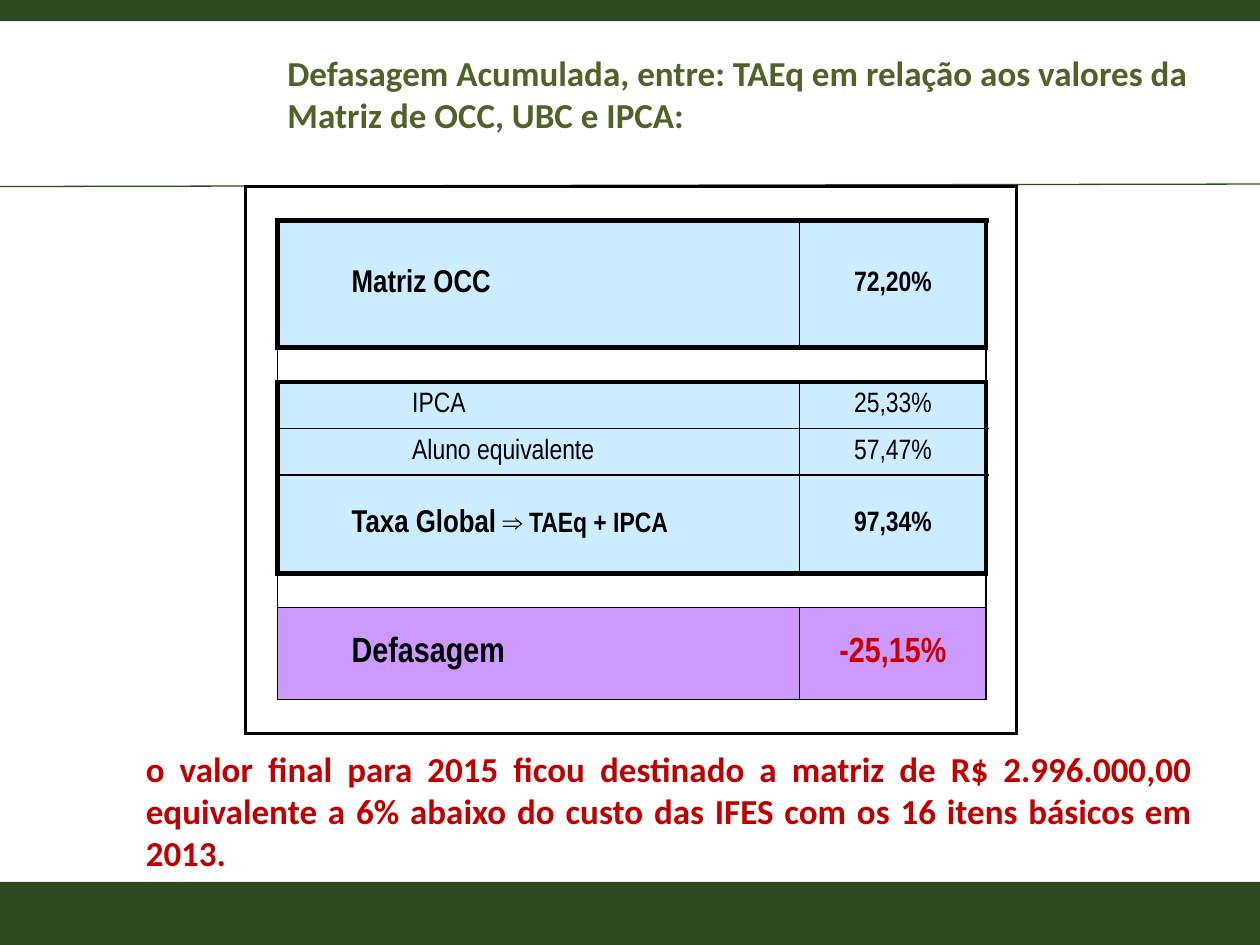
from dataclasses import dataclass

from lxml.etree import SubElement
from pptx import Presentation
from pptx.dml.color import RGBColor
from pptx.enum.shapes import MSO_CONNECTOR as Conn, MSO_SHAPE as Shape
from pptx.enum.text import MSO_ANCHOR as Anchor, MSO_AUTO_SIZE as AutoSize, PP_ALIGN as Align
from pptx.oxml.ns import qn
from pptx.util import Cm, Pt


@dataclass(frozen=True)
class Theme:
    """Colours, fonts and type sizes of the slide."""
    band: str = "314923"
    title: str = "4F6228"
    note: str = "C00000"
    ink: str = "000000"
    negative: str = "CC0000"
    rate: str = "CCECFF"
    gap: str = "CC99FF"
    text_font: str = "Calibri"
    table_font: str = "Arial Narrow"
    big: int = 20
    medium: int = 18
    small: int = 16
    empty: int = 8


T = Theme()
COLS = [0.64, 3.51, 3.51, 3.51, 3.76, 0.58]
ROWS = [0.69, 2.56, 0.69, 0.94, 0.94, 1.98, 0.69, 1.85, 0.69]
HAIR, FRAME, THICK = 1, 2.25, 3
LABEL, VALUE, LAST = 1, 4, 5
INDENT = {1: 1.5, 2: 2.72}
ROW_EDGES = {1: THICK, 2: THICK, 3: THICK, 4: HAIR, 5: HAIR, 6: THICK, 7: HAIR, 8: HAIR}
RATE_ROWS, GAP_ROWS = (1, 3, 4, 5), (2, 6)
RECORDS = {
    1: (1, [("Matriz OCC", T.medium)], ("72,20%", T.small), True, T.ink, T.rate),
    3: (2, [("IPCA", T.small)], ("25,33%", T.small), False, T.ink, T.rate),
    4: (2, [("Aluno equivalente", T.small)], ("57,47%", T.small), False, T.ink, T.rate),
    5: (1, [("Taxa Global", T.medium), (" ⇒ TAEq + IPCA", T.small)], ("97,34%", T.small),
        True, T.ink, T.rate),
    7: (1, [("Defasagem", T.big)], ("-25,15%", T.big), True, T.negative, T.gap),
}


def apply(obj, **values):
    """Set each named attribute on the object."""
    for name, value in values.items():
        setattr(obj, name, value)


def write(p, text, size, color, font, bold=True):
    """Add one formatted run to a paragraph."""
    r = p.add_run()
    r.text = text
    apply(r.font, size=Pt(size), name=font, bold=bold)
    r.font.color.rgb = RGBColor.from_string(color)


def paint(obj, color):
    """Give a shape or cell a solid fill."""
    obj.fill.solid()
    obj.fill.fore_color.rgb = RGBColor.from_string(color)


def add_band(s, box):
    """Draw a plain band across the given box."""
    sp = s.shapes.add_shape(Shape.RECTANGLE, *map(Cm, box))
    sp.shadow.inherit = False
    paint(sp, T.band)
    sp.line.fill.background()


def add_rule(s, box):
    """Draw the thin rule from the lower left to the upper right of the box."""
    x, y, w, h = box
    line = s.shapes.add_connector(Conn.STRAIGHT, *map(Cm, (x, y + h, x + w, y)))
    line.line.width = Pt(0.75)
    line.line.color.rgb = RGBColor.from_string(T.band)
    SubElement(line._element.spPr, qn("a:effectLst"))


def add_title(s, box, text):
    """Place the title placeholder in the box."""
    sp = s.shapes.title
    apply(sp, **dict(zip(("left", "top", "width", "height"), map(Cm, box))))
    tf = sp.text_frame
    apply(tf, word_wrap=True, auto_size=AutoSize.NONE, vertical_anchor=Anchor.TOP)
    p = tf.paragraphs[0]
    p.alignment = Align.LEFT
    write(p, text, T.big, T.title, T.text_font)


def add_note(s, box, text):
    """Place the justified closing statement in the box."""
    tf = s.shapes.add_textbox(*map(Cm, box)).text_frame
    tf.word_wrap = True
    p = tf.paragraphs[0]
    p.alignment = Align.JUSTIFY
    write(p, text, T.big, T.note, T.text_font)


def column_edge(row, x):
    """Return the width of the vertical edge x in a row."""
    if x in (0, len(COLS)):
        return FRAME
    if x in (LABEL, LAST) and 0 < row < len(ROWS) - 1:
        return THICK if row in RATE_ROWS else HAIR
    return HAIR if x == VALUE and row in RECORDS else 0


def row_edge(y, col):
    """Return the width of the horizontal edge y in a column."""
    if y in (0, len(ROWS)):
        return FRAME
    return ROW_EDGES[y] if LABEL <= col < LAST else 0


def set_borders(cell, row, col, end):
    """Draw the four borders of a cell that ends at column edge end."""
    widths = {"L": column_edge(row, col), "R": column_edge(row, end),
              "T": row_edge(row, col), "B": row_edge(row + 1, col)}
    tc_pr = cell._tc.get_or_add_tcPr()
    for side, width in widths.items():
        ln = SubElement(tc_pr, qn(f"a:ln{side}"), w=str(Pt(width)))
        if width:
            fill = SubElement(ln, qn("a:solidFill"))
            SubElement(fill, qn("a:srgbClr"), val=T.ink)
        else:
            SubElement(ln, qn("a:noFill"))


def fill_record(table, row, record):
    """Write the label and the value of one table row."""
    level, label, value, bold, color, fill = record
    for col, runs, ink in ((LABEL, label, T.ink), (VALUE, [value], color)):
        cell = table.cell(row, col)
        p = cell.text_frame.paragraphs[0]
        for text, size in runs:
            write(p, text, size, ink, T.table_font, bold)
        paint(cell, fill)
        cell.vertical_anchor = Anchor.MIDDLE
        if col == LABEL:
            cell.margin_left = Cm(INDENT[level])
        else:
            p.alignment = Align.CENTER


def add_rates(s, box):
    """Build the framed table of rates in the box."""
    table = s.shapes.add_table(len(ROWS), len(COLS), *map(Cm, box)).table
    apply(table, first_row=False, horz_banding=False)
    for column, width in zip(table.columns, COLS):
        column.width = Cm(width)
    for row, height in enumerate(ROWS):
        table.rows[row].height = Cm(height)
        span_end = VALUE if row in RECORDS else LAST if row in GAP_ROWS else LABEL + 1
        for col in range(len(COLS)):
            cell = table.cell(row, col)
            set_borders(cell, row, col, span_end if col == LABEL else col + 1)
            cell.fill.background()
            if row not in RECORDS or col not in (LABEL, VALUE):
                apply(cell, margin_top=0, margin_bottom=0)
                SubElement(cell.text_frame.paragraphs[0]._p, qn("a:endParaRPr"),
                           sz=str(T.empty * 100))
        if span_end > LABEL + 1:
            table.cell(row, LABEL).merge(table.cell(row, span_end - 1))
        if row in RECORDS:
            fill_record(table, row, RECORDS[row])


def main():
    """Build and save the slide."""
    prs = Presentation()
    apply(prs, slide_width=Cm(25.4), slide_height=Cm(19.05))
    s = prs.slides.add_slide(prs.slide_layouts[5])
    add_band(s, (0, 17.78, 25.4, 1.27))
    add_band(s, (0, 0, 25.4, 0.43))
    add_rule(s, (0, 3.71, 25.4, 0.05))
    add_title(s, (5.54, 0.91, 19.18, 2.79),
              "Defasagem Acumulada, entre: TAEq em relação aos valores da Matriz de OCC, UBC e IPCA:")
    add_rates(s, (4.95, 3.76, sum(COLS), sum(ROWS)))
    add_note(s, (2.69, 14.94, 21.59, 2.82),
             "o valor final para 2015 ficou destinado a matriz de R$ 2.996.000,00 equivalente a 6% "
             "abaixo do custo das IFES com os 16 itens básicos em 2013.")
    prs.save("out.pptx")


if __name__ == "__main__":
    main()
